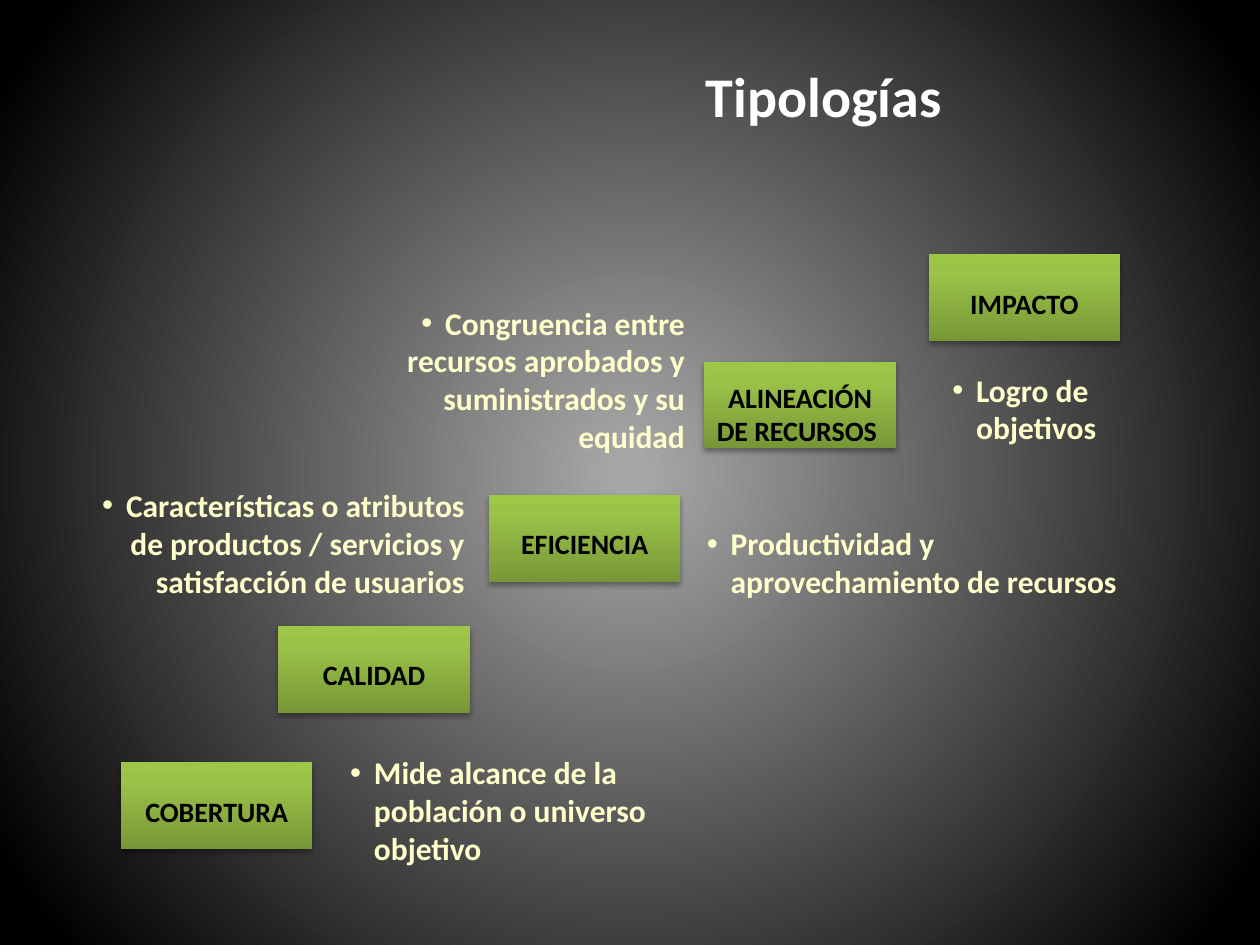
"""Build the slide of indicator types as a rising staircase of boxes with notes."""
from lxml import etree
from pptx import Presentation, util as u
from pptx.dml import color
from pptx.enum import shapes, text
from pptx.oxml import ns

BOX_W, BOX_H = 3.86, 1.75
LINE_H = 0.69
BLACK, WHITE, CREAM = "000000", "FFFFFF", "FFFFCC"
GREENS = [(0, "779737"), (80, "9BC348"), (100, "9DC746")]
GREYS = [(2, "A6A6A6"), (94, BLACK)]

TITLE = ("Tipologías", (8.71, 0.97, 15.8, 1.91))
STEPS = [
    (["COBERTURA"], 2.44, 15.37, 2.92, 0.64),
    (["CALIDAD"], 5.61, 12.62, 2.11, 0.64),
    (["EFICIENCIA"], 9.86, 9.98, 2.59, 0.64),
    (["ALINEACIÓN", "DE RECURSOS "], 14.2, 7.29, 3.4, 0.38),
    (["IMPACTO"], 18.72, 5.13, 2.21, 0.64),
]
NOTES = [
    ("Logro de objetivos", "LEFT", (19.2, 7.47, 4.29, 1.55)),
    ("Congruencia entre recursos aprobados y suministrados y su equidad",
     "RIGHT", (7.21, 6.12, 6.6, 3.07)),
    ("Productividad y aprovechamiento de recursos",
     "LEFT", (14.25, 10.57, 8.74, 1.55)),
    ("Características o atributos de productos / servicios y satisfacción de usuarios",
     "RIGHT", (2.03, 9.8, 7.34, 2.31)),
    ("Mide alcance de la población o universo objetivo",
     "LEFT", (7.06, 15.19, 7.37, 2.31)),
]


def rgb(value):
    return color.RGBColor.from_string(value)


def add(parent, tag, **attrs):
    return etree.SubElement(parent, ns.qn(tag), {k: str(v) for k, v in attrs.items()})


def set_gradient(fill, element, stops, circle=False):
    fill.solid()
    solid = next(element.iter(ns.qn("a:solidFill")))
    grad = etree.Element(ns.qn("a:gradFill"), rotWithShape="1")
    stop_list = add(grad, "a:gsLst")
    for pos, value in stops:
        add(add(stop_list, "a:gs", pos=pos * 1000), "a:srgbClr", val=value)
    if circle:
        sides = dict.fromkeys("ltrb", 50000)
        add(add(grad, "a:path", path="circle"), "a:fillToRect", **sides)
    else:
        add(grad, "a:lin", ang=270 * 60000, scaled=0)
    solid.getparent().replace(solid, grad)


def add_text(s, lines, at, size=16, ink=BLACK, align="CENTER", wrap=True,
             anchor="TOP", bullet=False):
    tf = s.shapes.add_textbox(*map(u.Cm, at)).text_frame
    tf.margin_left = tf.margin_right = tf.margin_top = tf.margin_bottom = 0
    tf.word_wrap = wrap
    tf.vertical_anchor = text.MSO_ANCHOR[anchor]
    for i, line in enumerate(lines):
        p = tf.add_paragraph() if i else tf.paragraphs[0]
        p.alignment = text.PP_ALIGN[align]
        if bullet:
            props = p._p.get_or_add_pPr()
            props.set("marL", str(u.Cm(0.48)))
            props.set("indent", str(-u.Cm(0.48)))
            add(props, "a:buFont", typeface="Arial")
            add(props, "a:buChar", char="•")
        r = p.add_run()
        r.text = line
        r.font.name, r.font.size, r.font.bold = "Calibri", u.Pt(size), True
        r.font.color.rgb = rgb(ink)


def add_box(s, left, top):
    sp = s.shapes.add_shape(shapes.MSO_SHAPE.RECTANGLE,
                            *map(u.Cm, (left, top, BOX_W, BOX_H)))
    set_gradient(sp.fill, sp._element.spPr, GREENS)
    sp.line.fill.background()
    sp.shadow.inherit = False
    effects = sp._element.spPr.find(ns.qn("a:effectLst"))
    shadow = add(effects, "a:outerShdw", blurRad=u.Pt(3.1), dist=u.Pt(1.8),
                 dir=90 * 60000, rotWithShape=0)
    add(add(shadow, "a:srgbClr", val=BLACK), "a:alpha", val=35000)


def main():
    prs = Presentation()
    prs.slide_width, prs.slide_height = u.Cm(25.4), u.Cm(19.05)
    s = prs.slides.add_slide(prs.slide_layouts[6])
    set_gradient(s.background.fill, s._element, GREYS, circle=True)
    add_text(s, [TITLE[0]], TITLE[1], size=32, ink=WHITE, anchor="MIDDLE")
    for _, left, top, _, _ in STEPS:
        add_box(s, left, top)
    for lines, left, top, width, drop in STEPS:
        at = (left + (BOX_W - width) / 2, top + drop, width, LINE_H * len(lines))
        add_text(s, lines, at, wrap=False)
    for note, align, at in NOTES:
        add_text(s, [note], at, size=18, ink=CREAM, align=align, bullet=True)
    prs.save("out.pptx")


if __name__ == "__main__":
    main()
